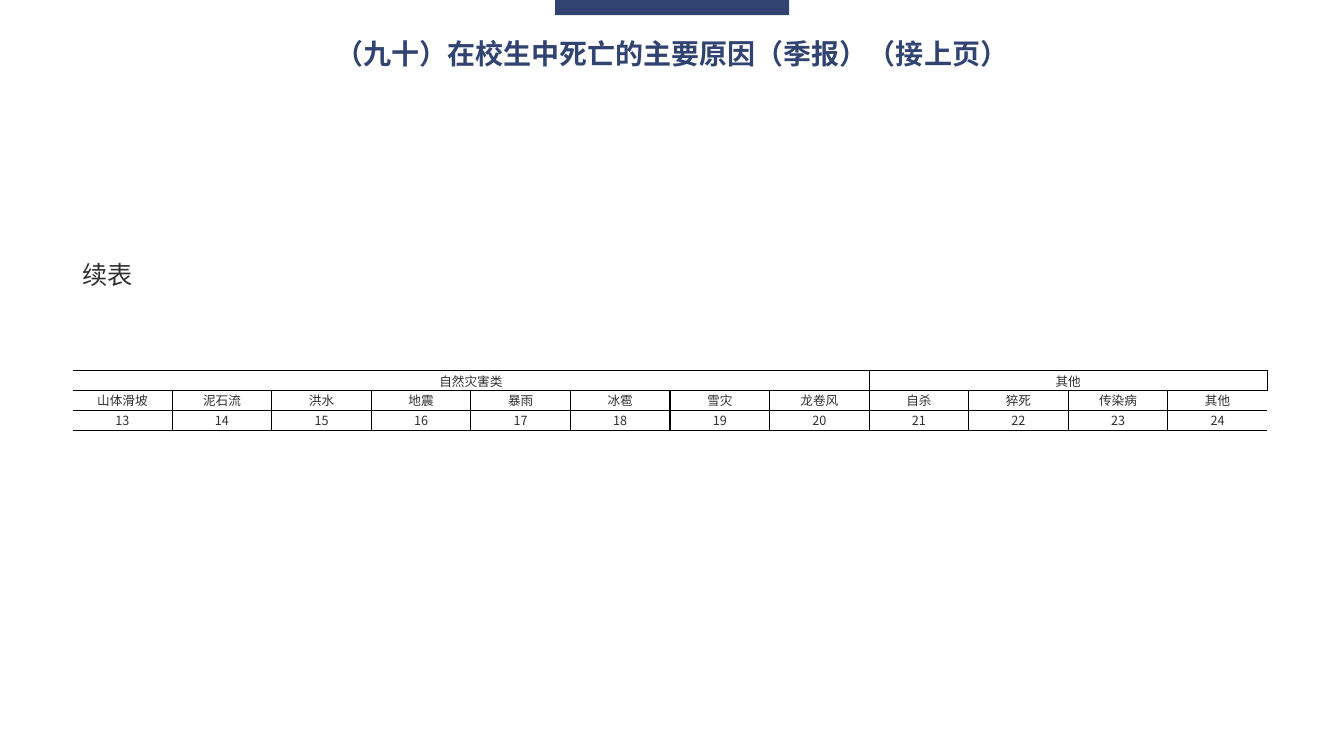
"""Builds the slide on the main causes of death among enrolled students (continued table)."""
from lxml.etree import SubElement
from pptx import Presentation
from pptx.dml.color import RGBColor
from pptx.enum.shapes import MSO_SHAPE as Shape
from pptx.enum.text import MSO_ANCHOR as Anchor, MSO_AUTO_SIZE as AutoSize, PP_ALIGN as Align
from pptx.oxml.ns import qn
from pptx.util import Cm, Pt

TITLE = "（九十）在校生中死亡的主要原因（季报）（接上页）"
CAPTION = "续表"
GROUPS = [
    ("自然灾害类", ["山体滑坡", "泥石流", "洪水", "地震", "暴雨", "冰雹", "雪灾", "龙卷风"]),
    ("其他", ["自杀", "猝死", "传染病", "其他"]),
]
FIRST_NUMBER = 13

NAVY = RGBColor(0x30, 0x43, 0x71)
INK = RGBColor(0x2F, 0x2F, 0x2F)
SANS = "Noto Sans CJK SC"
SERIF = "Times New Roman"
COLUMN_WIDTH, ROW_HEIGHT = Cm(2.51), Cm(0.5)


def style(para, size, color, latin=SANS, bold=False, align=Align.CENTER):
    para.alignment = align
    font = para.font
    font.size, font.bold, font.name = Pt(size), bold, latin
    font.color.rgb = color
    defaults = para._p.pPr.find(qn("a:defRPr"))
    SubElement(defaults, qn("a:ea")).set("typeface", SANS)


def add_text(page, text, left, top, width, height, size, color, **options):
    box = page.shapes.add_textbox(Cm(left), Cm(top), Cm(width), Cm(height))
    frame = box.text_frame
    frame.word_wrap = False
    frame.auto_size = AutoSize.NONE
    frame.vertical_anchor = Anchor.MIDDLE
    frame.margin_top = frame.margin_bottom = 0
    para = frame.paragraphs[0]
    para.text = text
    style(para, size, color, **options)
    return para


def add_borders(cell, sides):
    properties = cell._tc.get_or_add_tcPr()
    for position, side in enumerate(("L", "R", "T", "B")):
        line = properties.makeelement(qn(f"a:ln{side}"), {"w": str(Pt(1))})
        if side in sides:
            fill = SubElement(line, qn("a:solidFill"))
            SubElement(fill, qn("a:srgbClr")).set("val", "000000")
        else:
            SubElement(line, qn("a:noFill"))
        properties.insert(position, line)


def add_causes(page):
    causes = [cause for _, members in GROUPS for cause in members]
    count = len(causes)
    headings = [text for name, members in GROUPS for text in [name] + [""] * (len(members) - 1)]
    numbers = [str(FIRST_NUMBER + index) for index in range(count)]
    rows = [(headings, SERIF), (causes, SERIF), (numbers, SANS)]
    frame = page.shapes.add_table(
        len(rows), count, Cm(1.83), Cm(9.34), COLUMN_WIDTH * count, ROW_HEIGHT * len(rows))
    table = frame.table
    table.first_row = table.horz_banding = False
    for column in table.columns:
        column.width = COLUMN_WIDTH
    for row, (texts, latin) in enumerate(rows):
        table.rows[row].height = ROW_HEIGHT
        for column, text in enumerate(texts):
            cell = table.cell(row, column)
            cell.text = text
            cell.fill.background()
            cell.vertical_anchor = Anchor.MIDDLE
            cell.margin_left = cell.margin_right = Cm(0.18)
            cell.margin_top = cell.margin_bottom = 0
            style(cell.text_frame.paragraphs[0], 9, INK, latin)
            left = "L" if column > 0 else ""
            right = "R" if column < count - 1 else ""
            add_borders(cell, "TB" + left + right)
    start = 0
    for _, members in GROUPS:
        end = start + len(members)
        table.cell(0, start).merge(table.cell(0, end - 1))
        start = end


def main():
    deck = Presentation()
    deck.slide_width, deck.slide_height = Cm(33.87), Cm(19.05)
    page = deck.slides.add_slide(deck.slide_layouts[6])
    bar = page.shapes.add_shape(Shape.RECTANGLE, Cm(13.99), Cm(-0.02), Cm(5.9), Cm(0.4))
    bar.shadow.inherit = False
    bar.fill.solid()
    bar.fill.fore_color.rgb = NAVY
    bar.line.fill.background()
    add_text(page, TITLE, 8.13, 0.79, 17.6, 1.12, 20, NAVY, bold=True)
    caption = add_text(page, CAPTION, 1.83, 6.48, 1.8, 0.97, 18, INK, align=Align.LEFT)
    caption.line_spacing = 0.92
    add_causes(page)
    deck.save("out.pptx")


if __name__ == "__main__":
    main()
